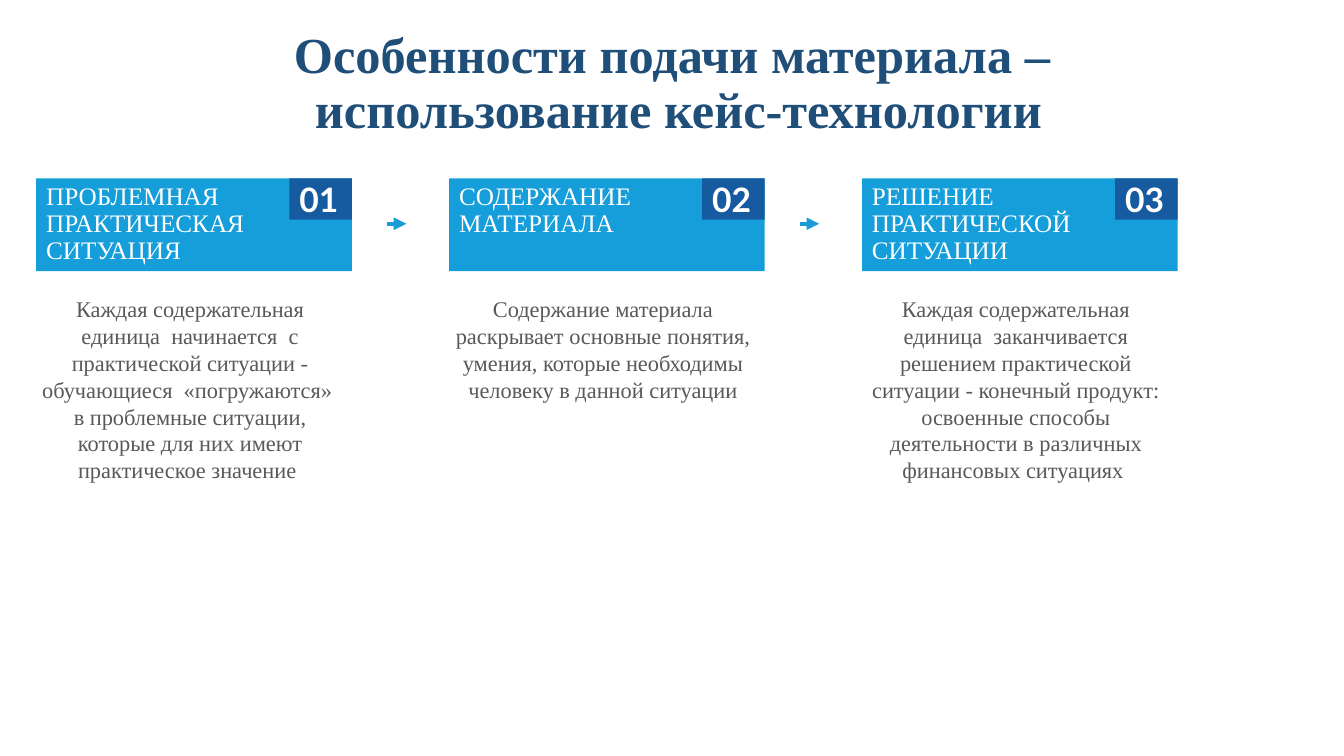
from lxml import etree
from pptx import Presentation
from pptx.dml.color import RGBColor
from pptx.enum.shapes import MSO_CONNECTOR, MSO_SHAPE
from pptx.enum.text import MSO_ANCHOR, MSO_AUTO_SIZE, PP_ALIGN
from pptx.oxml.ns import qn
from pptx.util import Inches, Pt

TITLE = "Особенности подачи материала – \nиспользование кейс-технологии"
STEPS = [
    ("ПРОБЛЕМНАЯ ПРАКТИЧЕСКАЯ \vСИТУАЦИЯ",
     "Каждая содержательная единица  начинается  с практической ситуации - "
     "обучающиеся  «погружаются» \vв проблемные ситуации, которые для них "
     "имеют практическое значение ", 1.99),
    ("СОДЕРЖАНИЕ МАТЕРИАЛА",
     "Содержание материала раскрывает основные понятия, умения, которые "
     "необходимы человеку в данной ситуации", 1.18),
    ("РЕШЕНИЕ ПРАКТИЧЕСКОЙ СИТУАЦИИ",
     "Каждая содержательная единица  заканчивается решением практической "
     "ситуации - конечный продукт: освоенные способы деятельности в различных "
     "финансовых ситуациях ", 1.99),
]

SERIF, SANS = "Times New Roman", "Lato"
NAVY = RGBColor(0x1F, 0x4E, 0x79)
SKY = RGBColor(0x15, 0x9E, 0xDA)
BLUE = RGBColor(0x16, 0x5A, 0x9F)
ARROW = RGBColor(0x1A, 0x9A, 0xD6)
GRAY = RGBColor(0x59, 0x59, 0x59)
WHITE = RGBColor(0xFF, 0xFF, 0xFF)

LEFT, TOP, PITCH = 0.36, 1.77, 4.095
HEAD_W, HEAD_H = 3.13, 0.92
BADGE_W, BADGE_H = 0.62, 0.41
BODY_TOP, BODY_W = 2.88, 3.21
ARROW_GAP, ARROW_W, ARROW_Y = 0.35, 0.19, 2.22


def write(shape, text, size, color, font=SERIF, bold=False,
          align=PP_ALIGN.LEFT, spacing=None):
    tf = shape.text_frame
    tf.word_wrap = True
    tf.vertical_anchor = MSO_ANCHOR.TOP
    tf.text = text
    for p in tf.paragraphs:
        p.alignment = align
        p.line_spacing = spacing
        for r in p.runs:
            r.font.size, r.font.name, r.font.bold = Pt(size), font, bold
            r.font.color.rgb = color


def add_text(shapes, x, y, w, h):
    return shapes.add_textbox(Inches(x), Inches(y), Inches(w), Inches(h))


def add_block(shapes, x, y, w, h, fill):
    block = shapes.add_shape(MSO_SHAPE.RECTANGLE, Inches(x), Inches(y),
                             Inches(w), Inches(h))
    block.shadow.inherit = False
    block.fill.solid()
    block.fill.fore_color.rgb = fill
    block.line.fill.background()
    return block


def add_arrow(shapes, x, y, length):
    arrow = shapes.add_connector(MSO_CONNECTOR.STRAIGHT, Inches(x), Inches(y),
                                 Inches(x + length), Inches(y))
    arrow.line.color.rgb = ARROW
    arrow.line.width = Pt(3)
    etree.SubElement(arrow.line._get_or_add_ln(), qn("a:tailEnd"),
                     type="triangle")
    etree.SubElement(arrow._element.spPr, qn("a:effectLst"))


def add_step(shapes, x, number, heading, body, body_h):
    group = shapes.add_group_shape().shapes
    write(add_block(group, x, TOP, HEAD_W, HEAD_H, SKY),
          heading, 18, WHITE, spacing=0.9)
    badge_x = x + HEAD_W - BADGE_W
    write(add_block(group, badge_x, TOP, BADGE_W, BADGE_H, BLUE),
          f"{number:02}", 24, WHITE, SANS, True, spacing=0.9)
    text = add_text(group, x + HEAD_W - BODY_W, BODY_TOP, BODY_W, body_h)
    write(text, body, 16, GRAY, align=PP_ALIGN.CENTER)
    text.text_frame.auto_size = MSO_AUTO_SIZE.SHAPE_TO_FIT_TEXT


def main():
    prs = Presentation()
    prs.slide_width, prs.slide_height = Inches(13.33), Inches(7.5)
    shapes = prs.slides.add_slide(prs.slide_layouts[6]).shapes
    write(add_text(shapes, 0.28, 0.25, 12.9, 1.14), TITLE, 36, NAVY,
          bold=True, align=PP_ALIGN.CENTER, spacing=0.9)
    for i, step in enumerate(STEPS):
        add_step(shapes, LEFT + i * PITCH, i + 1, *step)
    for i in range(len(STEPS) - 1):
        add_arrow(shapes, LEFT + i * PITCH + HEAD_W + ARROW_GAP, ARROW_Y,
                  ARROW_W)
    prs.save("out.pptx")


if __name__ == "__main__":
    main()
